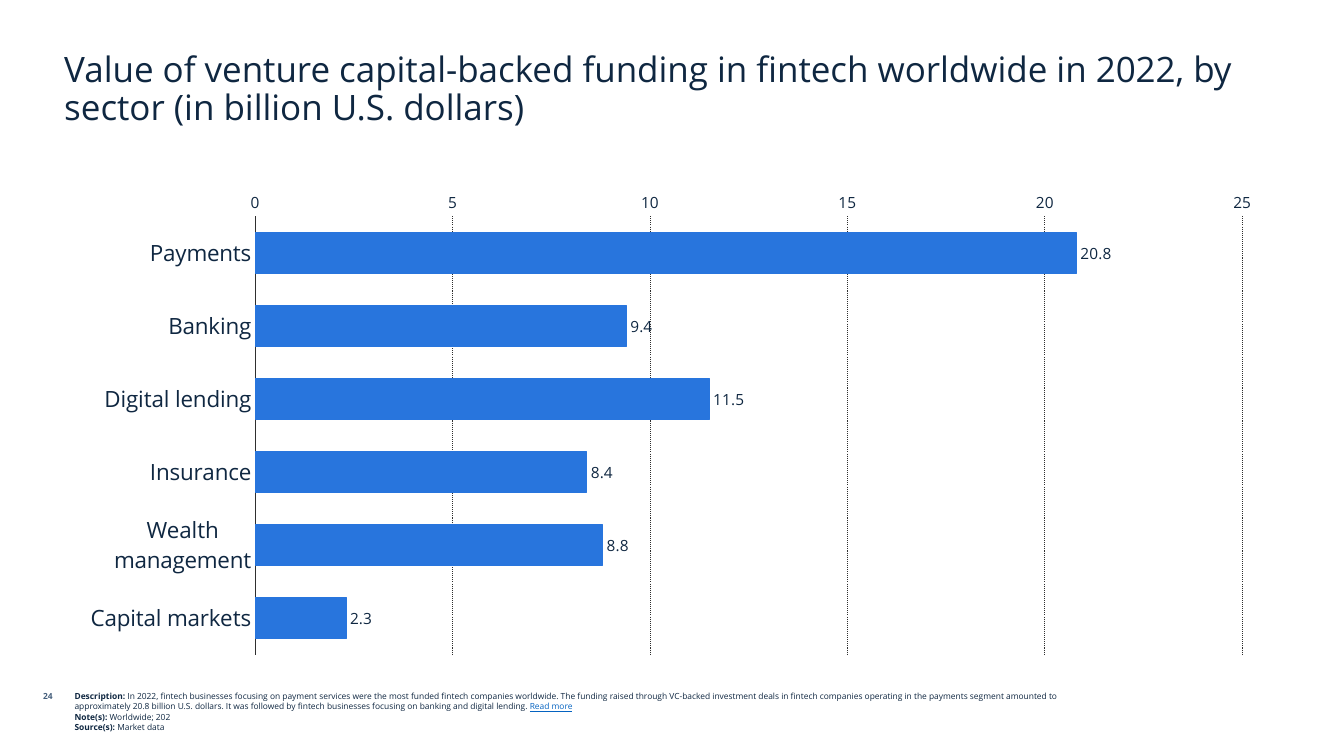
from lxml import etree
from pptx import Presentation
from pptx.chart.data import CategoryChartData
from pptx.dml.color import RGBColor
from pptx.enum.chart import XL_CHART_TYPE as CT, XL_LABEL_POSITION as LP, XL_TICK_MARK as TM
from pptx.enum.dml import MSO_LINE_DASH_STYLE as DASH
from pptx.enum.text import MSO_ANCHOR as ANCHOR, PP_ALIGN as ALIGN
from pptx.oxml.ns import qn
from pptx.util import Cm, Pt

FONT = "Open Sans"
NAVY = RGBColor(0x0F, 0x27, 0x41)
SLATE = RGBColor(0x45, 0x5F, 0x7C)
BLUE = RGBColor(0x28, 0x75, 0xDD)
LINK = RGBColor(0x05, 0x63, 0xC1)
GRAY = RGBColor(0x2F, 0x2F, 0x2F)

TITLE = ("Value of venture capital-backed funding in fintech worldwide in 2022, "
         "by sector (in billion U.S. dollars)")
DESCRIPTION = (
    "In 2022, fintech businesses focusing on payment services were the most funded "
    "fintech companies worldwide. The funding raised through VC-backed investment deals "
    "in fintech companies operating in the payments segment amounted to approximately "
    "20.8 billion U.S. dollars. It was followed by fintech businesses focusing on "
    "banking and digital lending. ")
NOTES = [
    ("Description: ", DESCRIPTION, "Read more"),
    ("Note(s): ", "Worldwide; 202", ""),
    ("Source(s): ", "Market data", ""),
]
FUNDING = {
    "Payments": 20.8,
    "Banking": 9.4,
    "Digital lending": 11.5,
    "Insurance": 8.4,
    "Wealth management": 8.8,
    "Capital markets": 2.3,
}


def set_font(font, size, color=NAVY, bold=False):
    font.name = FONT
    font.size = Pt(size)
    font.bold = bold
    font.color.rgb = color


def add_run(p, text, size=6, color=NAVY, bold=False, underline=False):
    r = p.add_run()
    r.text = text
    set_font(r.font, size, color, bold)
    r.font.underline = underline


def add_box(s, box, anchor=ANCHOR.TOP):
    tf = s.shapes.add_textbox(*map(Cm, box)).text_frame
    tf.word_wrap = True
    tf.vertical_anchor = anchor
    return tf


def add_text(s, text, box, anchor=ANCHOR.TOP, align=ALIGN.LEFT, spacing=1.0, **fmt):
    p = add_box(s, box, anchor).paragraphs[0]
    p.alignment = align
    p.line_spacing = spacing
    add_run(p, text, **fmt)


def add_notes(s, notes, box):
    tf = add_box(s, box)
    for i, (label, text, link) in enumerate(notes):
        p = tf.add_paragraph() if i else tf.paragraphs[0]
        add_run(p, label, bold=True)
        add_run(p, text)
        if link:
            add_run(p, link, color=LINK, underline=True)


def set_line(line, color):
    line.color.rgb = color
    line.width = Pt(0.75)


def style_axis(axis, size):
    axis.major_tick_mark = axis.minor_tick_mark = TM.NONE
    set_font(axis.tick_labels.font, size)


def place_plot(chart, x, y, w, h):
    area = chart.element.find(".//" + qn("c:plotArea"))
    for old in area.findall(qn("c:layout")):
        area.remove(old)
    layout = etree.Element(qn("c:layout"))
    manual = etree.SubElement(layout, qn("c:manualLayout"))
    values = dict(layoutTarget="inner", xMode="edge", yMode="edge", x=x, y=y, w=w, h=h)
    for tag, val in values.items():
        etree.SubElement(manual, qn("c:" + tag)).set("val", str(val))
    area.insert(0, layout)


def add_bar_chart(s, values, box):
    data = CategoryChartData(number_format="General")
    data.categories = list(values)
    data.add_series("Series 1", list(values.values()))
    chart = s.shapes.add_chart(CT.BAR_CLUSTERED, *map(Cm, box), data).chart
    chart.has_legend = chart.has_title = False
    set_font(chart.font, 11)
    place_plot(chart, 0.16, 0.07, 0.81, 0.91)

    sectors, amounts = chart.category_axis, chart.value_axis
    style_axis(sectors, 16)
    sectors.reverse_order = True
    set_line(sectors.format.line, GRAY)

    style_axis(amounts, 11)
    amounts.minimum_scale, amounts.maximum_scale, amounts.major_unit = 0, 25, 5
    amounts.tick_labels.number_format = "#,##0"
    amounts.tick_labels.number_format_is_linked = False
    amounts.format.line.fill.background()
    grid = amounts.major_gridlines.format.line
    set_line(grid, GRAY)
    grid.dash_style = DASH.ROUND_DOT

    plot = chart.plots[0]
    plot.gap_width, plot.overlap, plot.vary_by_categories = 80, -30, False
    bars = plot.series[0]
    bars.format.fill.solid()
    bars.format.fill.fore_color.rgb = BLUE
    set_line(bars.format.line, BLUE)
    labels = bars.data_labels
    labels.show_value = True
    labels.position = LP.OUTSIDE_END
    set_font(labels.font, 11)


def main():
    prs = Presentation()
    prs.slide_width, prs.slide_height = Cm(33.87), Cm(19.05)
    s = prs.slides.add_slide(prs.slide_layouts[6])
    add_notes(s, NOTES, (1.63, 17.3, 26.59, 1.47))
    add_bar_chart(s, FUNDING, (1.52, 4.6, 30.71, 12.14))
    add_text(s, "24", (-0.25, 17.3, 1.83, 0.76), align=ALIGN.RIGHT, color=SLATE, bold=True)
    add_text(s, TITLE, (1.37, 1.17, 31.09, 2.18), anchor=ANCHOR.BOTTOM, spacing=0.9, size=25)
    prs.save("out.pptx")


if __name__ == "__main__":
    main()
